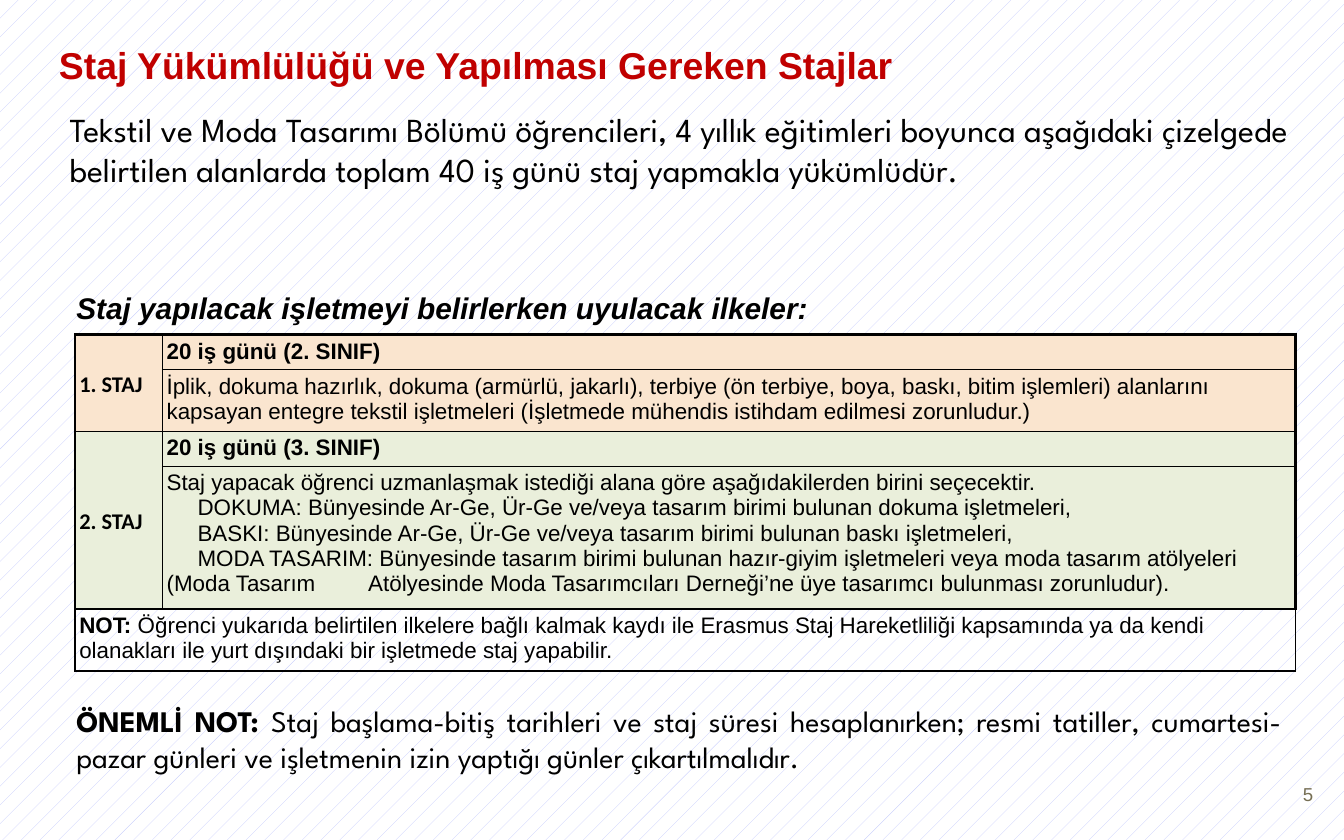
from lxml import etree
from pptx import Presentation
from pptx import util as u
from pptx.dml.color import RGBColor
from pptx.enum import dml, text
from pptx.oxml.ns import qn

BLACK = RGBColor(0, 0, 0)
RED = RGBColor(0xC0, 0, 0)
OLIVE = RGBColor(0x76, 0x6F, 0x54)
PEACH = RGBColor(0xFA, 0xE5, 0xCF)
GREEN = RGBColor(0xEA, 0xEF, 0xDB)
LILAC = RGBColor(0xC3, 0xCA, 0xFD)
WHITE = RGBColor(255, 255, 255)
SANS, ROUND, NARROW = "Arial", "League Spartan", "Calibri"
LEFT, MID = text.PP_ALIGN.LEFT, text.MSO_ANCHOR.MIDDLE
TOP = text.MSO_ANCHOR.TOP

# Content: a paragraph is a list of (words, bold) runs
TITLE = [("Staj Yükümlülüğü ve Yapılması Gereken Stajlar", True)]
INTRO = [("Tekstil ve Moda Tasarımı Bölümü öğrencileri, 4 yıllık eğitimleri boyunca "
          "aşağıdaki çizelgede belirtilen alanlarda toplam 40 iş günü staj yapmakla "
          "yükümlüdür.", False)]
RULES = [("Staj yapılacak işletmeyi belirlerken uyulacak ilkeler:", True)]
NOTE = [("ÖNEMLİ NOT: ", True),
        ("Staj başlama-bitiş tarihleri ve staj süresi hesaplanırken; resmi tatiller, "
         "cumartesi-pazar günleri ve işletmenin izin yaptığı günler çıkartılmalıdır.", False)]
PAGE = [("5", False)]

# Each internship: label, fill, heading, lead sentence, indented options
STAGES = [
    ("1. STAJ", PEACH, "20 iş günü (2. SINIF)",
     "İplik, dokuma hazırlık, dokuma (armürlü, jakarlı), terbiye (ön terbiye, boya, "
     "baskı, bitim işlemleri) alanlarını kapsayan entegre tekstil işletmeleri "
     "(İşletmede mühendis istihdam edilmesi zorunludur.)", []),
    ("2. STAJ", GREEN, "20 iş günü (3. SINIF)",
     "Staj yapacak öğrenci uzmanlaşmak istediği alana göre aşağıdakilerden birini "
     "seçecektir.",
     ["DOKUMA: Bünyesinde Ar-Ge, Ür-Ge ve/veya tasarım birimi bulunan dokuma işletmeleri,",
      "BASKI: Bünyesinde Ar-Ge, Ür-Ge ve/veya tasarım birimi bulunan baskı işletmeleri,",
      "MODA TASARIM: Bünyesinde tasarım birimi bulunan hazır-giyim işletmeleri veya moda "
      "tasarım atölyeleri (Moda Tasarım\tAtölyesinde Moda Tasarımcıları Derneği’ne üye "
      "tasarımcı bulunması zorunludur)."]),
]
FOOT = [("NOT:", True),
        (" Öğrenci yukarıda belirtilen ilkelere bağlı kalmak kaydı ile Erasmus Staj "
         "Hareketliliği kapsamında ya da kendi olanakları ile yurt dışındaki bir "
         "işletmede staj yapabilir.", False)]
COLS = [0.65, 8.43]
ROWS = [0.25, 0.46, 0.25, 1.05, 0.46]

# Boxes: runs, place, font, size, colour, align, anchor, top inset, left indent, italic
BOXES = [
    (TITLE, (0.34, 0.32, 7.52, 0.32), SANS, 20, RED, LEFT, MID, 0.1, 0, False),
    (INTRO, (0.3, 0.71, 9.5, 1.11), ROUND, 18, BLACK, LEFT, TOP, 0.1, 0.12, False),
    (PAGE, (9.27, 5.67, 0.6, 0.48), SANS, 10, OLIVE, text.PP_ALIGN.RIGHT, MID, 0.1, 0, False),
    (NOTE, (0.47, 5.18, 9.17, 0.64), ROUND, 16, BLACK, text.PP_ALIGN.JUSTIFY, TOP, 0.05, 0, False),
    (RULES, (0.47, 2.11, 7.1, 0.37), SANS, 16, BLACK, LEFT, TOP, 0.05, 0, True),
]


def write(para, runs, font, size, color, italic=False):
    for words, bold in runs:
        run = para.add_run()
        run.text = words
        f = run.font
        f.name, f.size, f.bold, f.italic = font, u.Pt(size), bold, italic
        f.color.rgb = color


def indent(para, left, first=0, tab=None):
    ppr = para._p.get_or_add_pPr()
    ppr.set("marL", str(u.Inches(left)))
    ppr.set("indent", str(u.Inches(first)))
    if tab:
        tabs = etree.SubElement(ppr, qn("a:tabLst"))
        etree.SubElement(tabs, qn("a:tab"), pos=str(u.Inches(tab)), algn="l")


def border(cell, widths):
    tcpr = cell._tc.get_or_add_tcPr()
    for i, (side, width) in enumerate(zip("LRTB", widths)):
        line = etree.Element(qn("a:ln" + side), w=str(u.Pt(width)))
        fill = etree.SubElement(line, qn("a:solidFill"))
        etree.SubElement(fill, qn("a:srgbClr"), val=str(BLACK))
        tcpr.insert(i, line)


def fill_cell(cell, paras):
    frame = cell.text_frame
    for i, runs in enumerate(paras):
        para = frame.add_paragraph() if i else frame.paragraphs[0]
        write(para, runs, SANS, 12, BLACK)
        if i:
            indent(para, 0, 0.23, 1.29)


def main():
    prs = Presentation()
    prs.slide_width, prs.slide_height = u.Inches(10), u.Inches(6.25)
    slide = prs.slides.add_slide(prs.slide_layouts[6])

    # Background
    back = slide.background.fill
    back.patterned()
    back.pattern = dml.MSO_PATTERN.PERCENT_5
    back.fore_color.rgb, back.back_color.rgb = LILAC, WHITE

    # Text boxes
    for runs, place, font, size, color, align, anchor, inset, left, italic in BOXES:
        frame = slide.shapes.add_textbox(*map(u.Inches, place)).text_frame
        frame.word_wrap = True
        frame.vertical_anchor = anchor
        frame.margin_top = frame.margin_bottom = u.Inches(inset)
        para = frame.paragraphs[0]
        para.alignment = align
        write(para, runs, font, size, color, italic)
        if left:
            indent(para, left)

    # Table grid
    place = (0.56, 2.49, sum(COLS), sum(ROWS))
    table = slide.shapes.add_table(len(ROWS), len(COLS), *map(u.Inches, place)).table
    table.first_row = table.horz_banding = False
    for col, width in zip(table.columns, COLS):
        col.width = u.Inches(width)
    for row, height in zip(table.rows, ROWS):
        row.height = u.Inches(height)

    # Fills, insets and a heavier outer border
    end_row, end_col = len(ROWS) - 1, len(COLS) - 1
    for r in range(len(ROWS)):
        for c in range(len(COLS)):
            cell = table.cell(r, c)
            cell.margin_left = cell.margin_right = u.Inches(0.03)
            cell.margin_top = cell.margin_bottom = u.Inches(0.03)
            if r < end_row:
                cell.fill.solid()
                cell.fill.fore_color.rgb = STAGES[r // 2][1]
            else:
                cell.fill.background()
            edges = (c == 0, c == end_col, r == 0, r == end_row)
            border(cell, [1.5 if edge else 1 for edge in edges])

    # Two rows for each internship, then the note
    for i, (label, _, head, lead, options) in enumerate(STAGES):
        top = 2 * i
        side = table.cell(top, 0)
        side.merge(table.cell(top + 1, 0))
        side.vertical_anchor = MID
        para = side.text_frame.paragraphs[0]
        para.line_spacing, para.space_after = 1.15, u.Pt(10)
        write(para, [(label, True)], NARROW, 12, BLACK)
        fill_cell(table.cell(top, 1), [[(head, True)]])
        fill_cell(table.cell(top + 1, 1), [[(line, False)] for line in [lead] + options])
    foot = table.cell(end_row, 0)
    foot.merge(table.cell(end_row, end_col))
    fill_cell(foot, [FOOT])

    prs.save("out.pptx")


if __name__ == "__main__":
    main()
